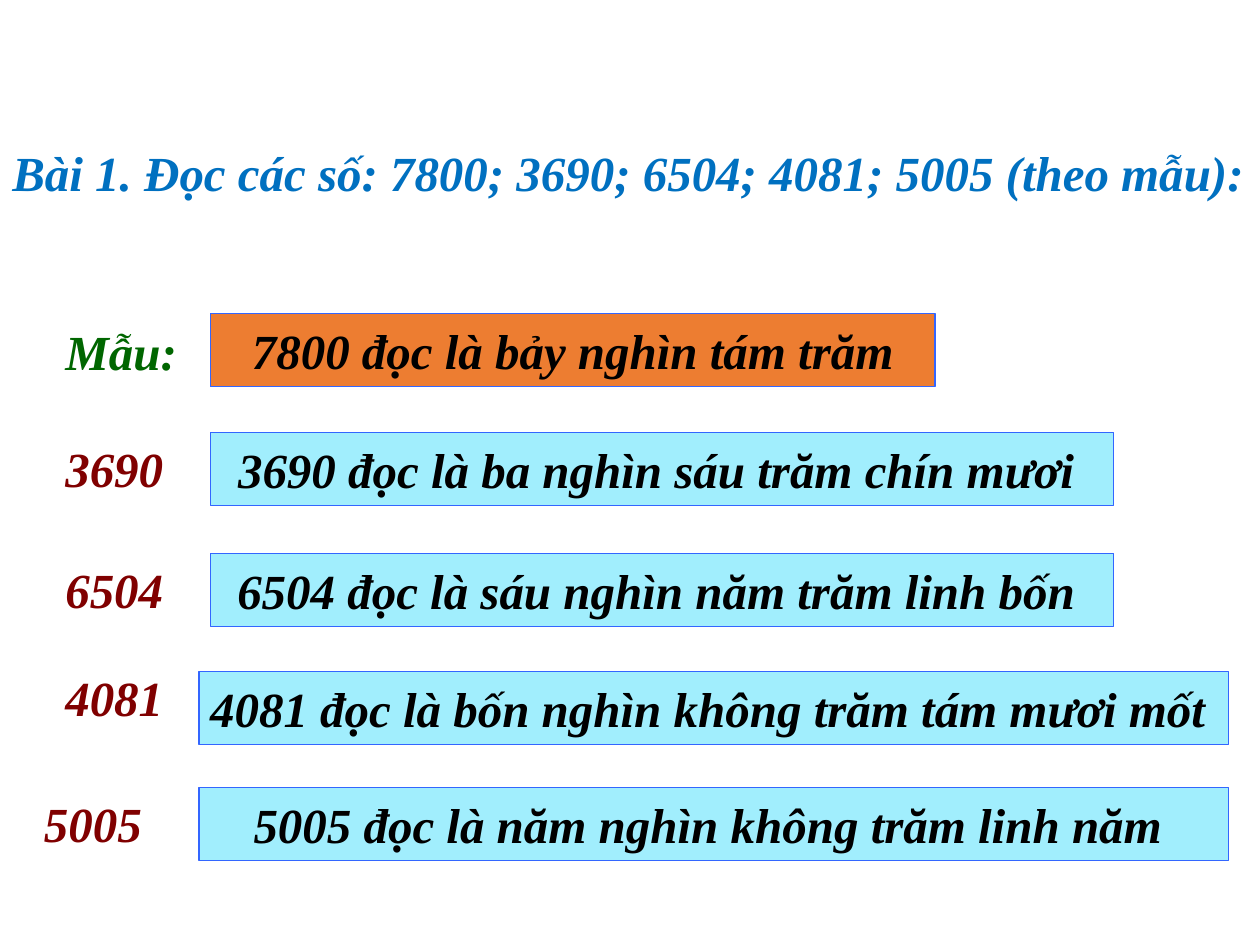
import pptx
import pptx.util
import pptx.dml.color
import pptx.enum.shapes
import pptx.enum.text

Inches = pptx.util.Inches

COLORS = {
    "title": "0070C0",
    "sample": "006600",
    "number": "800000",
    "reading": "000000",
    "sample_fill": "ED7D31",
    "answer_fill": "A1EEFD",
    "border": "3366FF",
}
TITLE = "Bài 1. Đọc các số: 7800; 3690; 6504; 4081; 5005 (theo mẫu):"
NARROW, MEDIUM, WIDE = (1.67, 5.75), (1.67, 7.17), (1.58, 8.17)
ROWS = [
    ("Mẫu:", 0.42, 2.5, "7800 đọc là bảy nghìn tám trăm", NARROW, 2.49),
    ("3690", 0.42, 3.43, "3690 đọc là ba nghìn sáu trăm chín mươi ", MEDIUM, 3.43),
    ("6504", 0.42, 4.39, "6504 đọc là sáu nghìn năm trăm linh bốn ", MEDIUM, 4.39),
    ("4081", 0.42, 5.25, "4081 đọc là bốn nghìn không trăm tám mươi mốt ", WIDE, 5.33),
    ("5005", 0.25, 6.25, "5005 đọc là năm nghìn không trăm linh năm ", WIDE, 6.25),
]
LABEL_HEIGHT, BAR_HEIGHT = 0.57, 0.58


def rgb(name):
    return pptx.dml.color.RGBColor.from_string(COLORS[name])


def add_text(s, text, left, top, width, height, color, fill=None):
    box = [Inches(v) for v in (left, top, width, height)]
    if fill:
        sp = s.shapes.add_shape(pptx.enum.shapes.MSO_SHAPE.RECTANGLE, *box)
        sp.shadow.inherit = False
        sp.fill.solid()
        sp.fill.fore_color.rgb = rgb(fill)
        sp.line.color.rgb = rgb("border")
        sp.line.width = pptx.util.Pt(0.75)
    else:
        sp = s.shapes.add_textbox(*box)
    tf = sp.text_frame
    tf.word_wrap = not fill
    p = tf.paragraphs[0]
    if fill:
        tf.vertical_anchor = pptx.enum.text.MSO_ANCHOR.MIDDLE
        p.alignment = pptx.enum.text.PP_ALIGN.CENTER
    else:
        tf.auto_size = pptx.enum.text.MSO_AUTO_SIZE.SHAPE_TO_FIT_TEXT
    r = p.add_run()
    r.text = text
    r.font.name = "Times New Roman"
    r.font.size = pptx.util.Pt(28)
    r.font.bold = r.font.italic = True
    r.font.color.rgb = rgb(color)


prs = pptx.Presentation()
prs.slide_width, prs.slide_height = Inches(10), Inches(7.5)
s = prs.slides.add_slide(prs.slide_layouts[6])

add_text(s, TITLE, 0, 1.08, 10.1, LABEL_HEIGHT, "title")
for i, (label, label_left, label_top, reading, (left, width), top) in enumerate(ROWS):
    kind, label_width = ("number", 1.08) if i else ("sample", 1.25)
    add_text(s, label, label_left, label_top, label_width, LABEL_HEIGHT, kind)
    add_text(s, reading, left, top, width, BAR_HEIGHT, "reading",
             fill="answer_fill" if i else "sample_fill")

prs.save("out.pptx")
